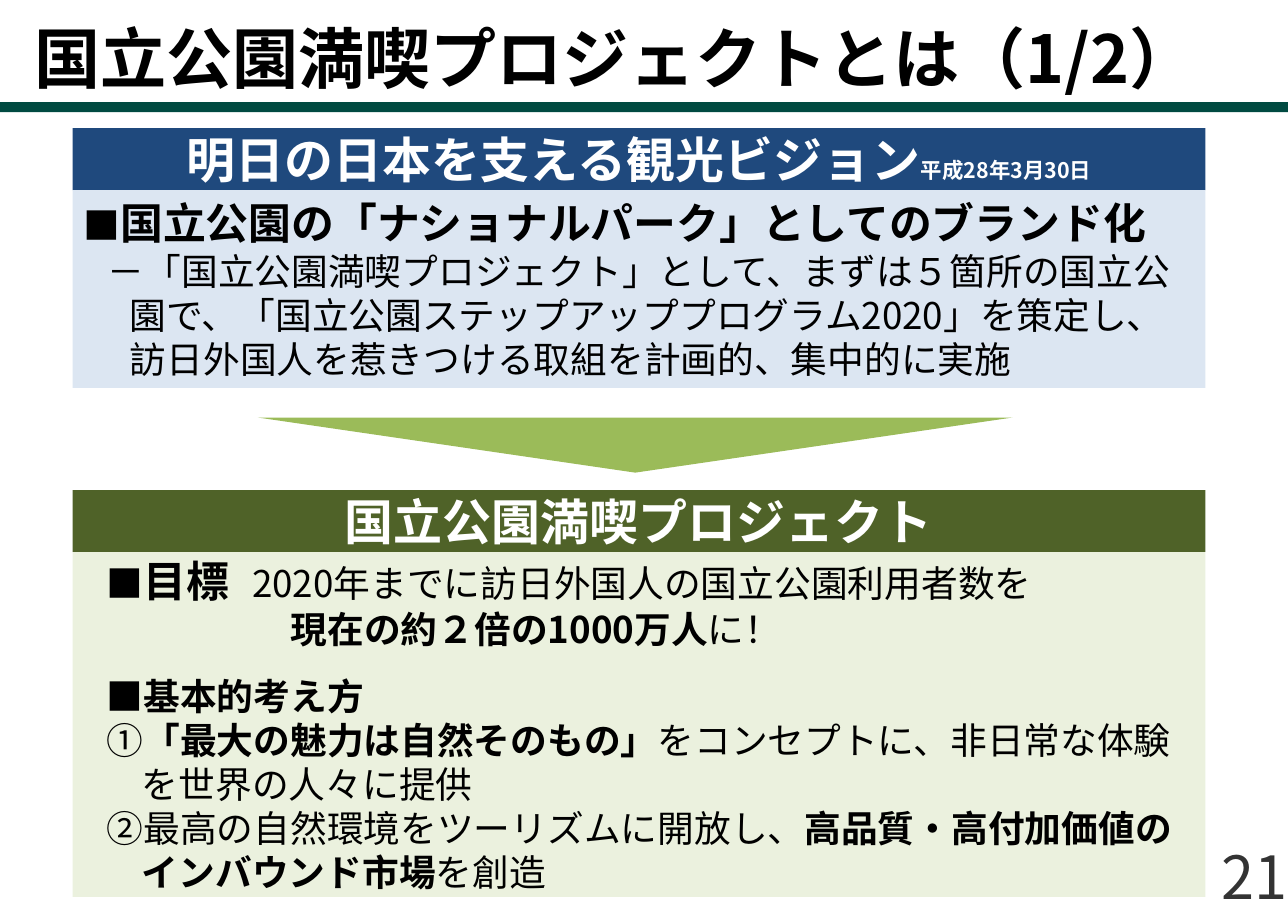
from collections import namedtuple

from lxml import etree
from pptx import Presentation
from pptx.dml.color import RGBColor
from pptx.enum.shapes import MSO_SHAPE
from pptx.enum.text import MSO_ANCHOR, PP_ALIGN
from pptx.oxml.ns import qn
from pptx.util import Inches, Pt

WIDTH, HEIGHT = Inches(11.69), Inches(8.27)
COLUMN, ROW = WIDTH / 100, HEIGHT / 100  # grid of 100 by 100
HEADER_ROWS = 6.8
FONT = "Noto Sans CJK JP"

BLACK = RGBColor(0x00, 0x00, 0x00)
WHITE = RGBColor(0xFF, 0xFF, 0xFF)
GRAY = RGBColor(0x33, 0x33, 0x33)
TEAL = RGBColor(0x00, 0x4A, 0x41)
NAVY = RGBColor(0x1F, 0x49, 0x7D)
PALE_BLUE = RGBColor(0xDC, 0xE6, 0xF2)
OLIVE = RGBColor(0x4F, 0x62, 0x28)
PALE_GREEN = RGBColor(0xEB, 0xF1, 0xDE)
GREEN = RGBColor(0x9B, 0xBB, 0x59)

# Left and width in columns, top and height in rows
Box = namedtuple("Box", "left top width height")
# Spans are (text, size, bold); margin, indent and tab in inches, before in points
Line = namedtuple("Line", "spans margin indent tab before", defaults=(0, 0, None, 0))

VISION_HEADER = [("明日の日本を支える観光ビジョン", 32, True), ("平成28年3月30日", 14, True)]
VISION_LINES = [
    Line([("■", 24, False), ("国立公園の「ナショナルパーク」としてのブランド化", 28, True)]),
    Line([("－「国立公園満喫プロジェクト」として、まずは５箇所の国立公園で、"
           "「国立公園ステップアッププログラム2020」を策定し、"
           "訪日外国人を惹きつける取組を計画的、集中的に実施", 24, False)], 0.42, -0.2),
]
PROJECT_HEADER = [("国立公園満喫プロジェクト", 32, True)]
PROJECT_LINES = [
    Line([("■", 24, False), ("目標\t", 28, True),
          ("2020年までに訪日外国人の国立公園利用者数を", 24, False)], 0.53, -0.32, 2.2),
    Line([("現在の約２倍の1000万人", 24, True), ("に！", 24, False)], 1.88),
    Line([("■基本的考え方", 24, True)], 0.53, -0.32, before=15),
    Line([("①", 24, False), ("「最大の魅力は自然そのもの」", 24, True),
          ("をコンセプトに、非日常な体験を世界の人々に提供", 24, False)], 0.53, -0.32),
    Line([("②最高の自然環境をツーリズムに開放し、", 24, False),
          ("高品質・高付加価値のインバウンド市場", 24, True),
          ("を創造", 24, False)], 0.53, -0.32),
]


def place(box):
    """Turn grid units into lengths."""
    return (round(box.left * COLUMN), round(box.top * ROW),
            round(box.width * COLUMN), round(box.height * ROW))


def add_block(page, kind, box, color):
    shape = page.shapes.add_shape(kind, *place(box))
    shape.shadow.inherit = False
    shape.fill.solid()
    shape.fill.fore_color.rgb = color
    shape.line.fill.background()
    return shape


def write(frame, lines, color, align=PP_ALIGN.LEFT, anchor=MSO_ANCHOR.MIDDLE):
    frame.word_wrap = True
    frame.vertical_anchor = anchor
    for number, line in enumerate(lines):
        para = frame.add_paragraph() if number else frame.paragraphs[0]
        para.alignment = align
        para.space_before = Pt(line.before)
        para.font.name = FONT
        para.font.color.rgb = color
        properties = para._p.get_or_add_pPr()
        properties.set("marL", str(Inches(line.margin)))
        properties.set("indent", str(Inches(line.indent)))
        defaults = properties.find(qn("a:defRPr"))
        etree.SubElement(defaults, qn("a:ea"), typeface=FONT)
        if line.tab:
            stops = etree.Element(qn("a:tabLst"))
            etree.SubElement(stops, qn("a:tab"), pos=str(Inches(line.tab)), algn="l")
            defaults.addprevious(stops)
        for text, size, bold in line.spans:
            span = para.add_run()
            span.text = text
            span.font.size = Pt(size)
            span.font.bold = bold


def add_label(page, box, spans, color, align, margins):
    frame = page.shapes.add_textbox(*place(box)).text_frame
    frame.margin_left = frame.margin_right = Inches(margins[0])
    frame.margin_top, frame.margin_bottom = 0, Inches(margins[1])
    write(frame, [Line(spans)], color, align, MSO_ANCHOR.BOTTOM)


def add_heading(page, box):
    """Title with the rule under it."""
    rule = Box(box.left, box.top + box.height + 0.1, box.width, 1.1)
    add_block(page, MSO_SHAPE.RECTANGLE, rule, TEAL)
    add_label(page, box, [("国立公園満喫プロジェクトとは（1/2）", 43.2, True)],
              BLACK, PP_ALIGN.LEFT, (0.31, 0.04))


def add_panel(page, box, header, lines, header_color, body_color):
    """Coloured header band above a pale body."""
    band = box._replace(height=HEADER_ROWS)
    body = box._replace(top=box.top + HEADER_ROWS, height=box.height - HEADER_ROWS)
    parts = ((band, header_color, [Line(header)], WHITE, PP_ALIGN.CENTER),
             (body, body_color, lines, BLACK, PP_ALIGN.LEFT))
    for area, fill, content, color, align in parts:
        shape = add_block(page, MSO_SHAPE.ROUNDED_RECTANGLE, area, fill)
        shape.adjustments[0] = 0
        write(shape.text_frame, content, color, align)


def add_down_arrow(page, box):
    arrow = add_block(page, MSO_SHAPE.ISOSCELES_TRIANGLE, box, GREEN)
    arrow.rotation = 180


def main():
    deck = Presentation()
    deck.slide_width, deck.slide_height = WIDTH, HEIGHT
    page = deck.slides.add_slide(deck.slide_layouts[6])

    add_heading(page, Box(0, 0, 100, 11.12))
    add_label(page, Box(87.08, 94.07, 12.92, 5.93), [("21", 38.9, False)],
              GRAY, PP_ALIGN.RIGHT, (0, 0))
    add_panel(page, Box(5.65, 14.07, 87.94, 28.5), VISION_HEADER, VISION_LINES,
              NAVY, PALE_BLUE)
    add_panel(page, Box(5.65, 53.8, 87.94, 44.65), PROJECT_HEADER, PROJECT_LINES,
              OLIVE, PALE_GREEN)
    add_down_arrow(page, Box(20.02, 45.83, 58.6, 6.05))

    deck.save("out.pptx")


if __name__ == "__main__":
    main()
